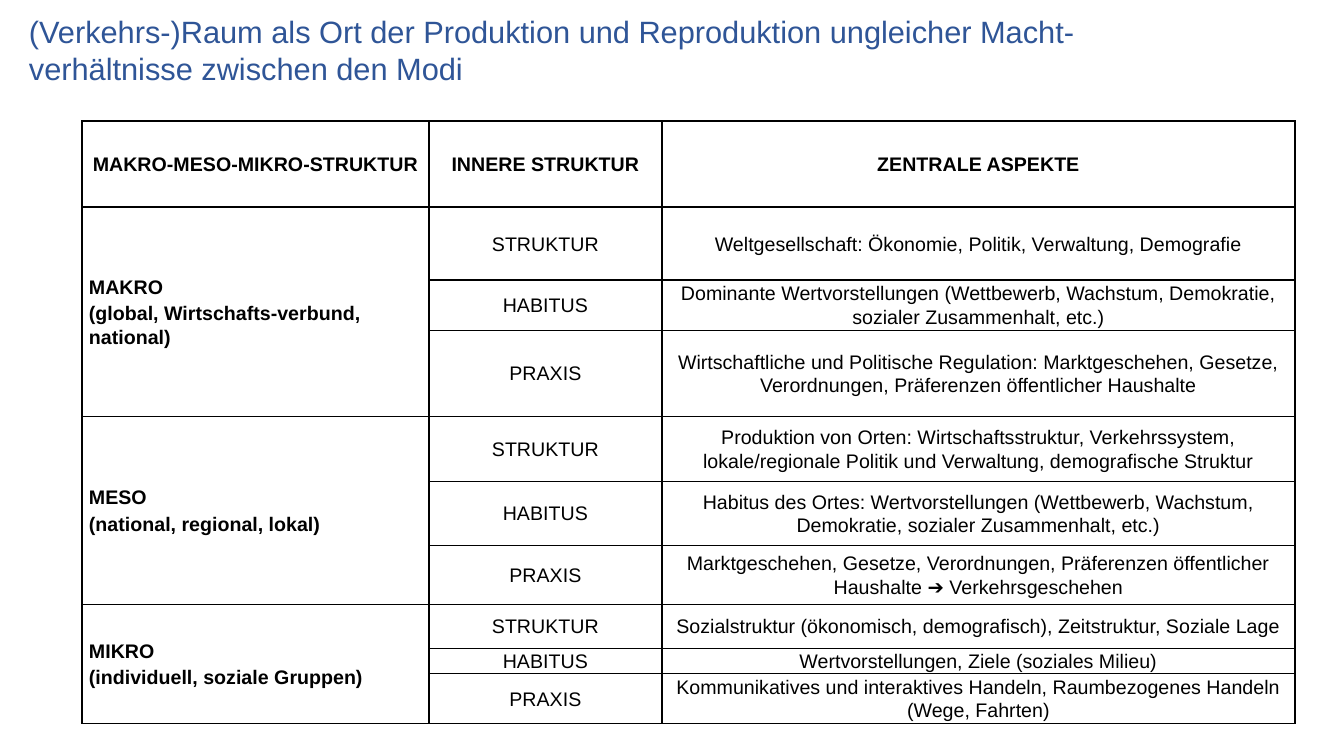
from lxml.etree import SubElement
from pptx import Presentation
from pptx.dml.color import RGBColor
from pptx.enum.text import MSO_ANCHOR as Anchor, PP_ALIGN as Align
from pptx.oxml.ns import qn
from pptx.util import Pt

TITLE = ("(Verkehrs-)Raum als Ort der Produktion und Reproduktion "
         "ungleicher Macht-verhältnisse zwischen den Modi")
HEADINGS = ["MAKRO-MESO-MIKRO-STRUKTUR", "INNERE STRUKTUR", "ZENTRALE ASPEKTE"]
INNER_STRUCTURE = ["STRUKTUR", "HABITUS", "PRAXIS"]
LEVELS = [
    (["MAKRO", "(global, Wirtschafts-verbund, national)"], [
        "Weltgesellschaft: Ökonomie, Politik, Verwaltung, Demografie",
        "Dominante Wertvorstellungen (Wettbewerb, Wachstum, Demokratie, "
        "sozialer Zusammenhalt, etc.)",
        "Wirtschaftliche und Politische Regulation: Marktgeschehen, Gesetze, "
        "Verordnungen, Präferenzen öffentlicher Haushalte",
    ]),
    (["MESO", "(national, regional, lokal)"], [
        "Produktion von Orten: Wirtschaftsstruktur, Verkehrssystem, "
        "lokale/regionale Politik und Verwaltung, demografische Struktur",
        "Habitus des Ortes: Wertvorstellungen (Wettbewerb, Wachstum, "
        "Demokratie, sozialer Zusammenhalt, etc.)",
        "Marktgeschehen, Gesetze, Verordnungen, Präferenzen öffentlicher "
        "Haushalte ➔ Verkehrsgeschehen",
    ]),
    (["MIKRO", "(individuell, soziale Gruppen)"], [
        "Sozialstruktur (ökonomisch, demografisch), Zeitstruktur, Soziale Lage",
        "Wertvorstellungen, Ziele (soziales Milieu)",
        "Kommunikatives und interaktives Handeln, Raumbezogenes Handeln "
        "(Wege, Fahrten)",
    ]),
]
COLUMN_WIDTHS = [347, 233, 633]
ROW_HEIGHTS = [86, 73, 50, 86, 65, 64, 59, 44, 25, 50]
BLUE = RGBColor(0x2F, 0x55, 0x97)
BLACK = RGBColor(0, 0, 0)
FONT = "Arial"


def px(length):
    return round(length * 914400 / 100.8)


def write(frame, lines, size, color, bold=False, align=Align.LEFT,
          spacing=None, before=0, after=0):
    """Fill a text frame with one paragraph per line."""
    frame.word_wrap = True
    for index, line in enumerate(lines):
        para = frame.add_paragraph() if index else frame.paragraphs[0]
        para.alignment = align
        para.line_spacing = spacing
        para.space_before = Pt(before if index else 0)
        para.space_after = Pt(after)
        span = para.add_run()
        span.text = line
        font = span.font
        font.name, font.size, font.bold = FONT, Pt(size), bold
        font.color.rgb = color


def draw_borders(cell):
    properties = cell._tc.get_or_add_tcPr()
    for side in ("a:lnL", "a:lnR", "a:lnT", "a:lnB"):
        line = SubElement(properties, qn(side), w=str(Pt(1)))
        fill = SubElement(line, qn("a:solidFill"))
        SubElement(fill, qn("a:srgbClr"), val=str(BLACK))


def write_cell(cell, lines, bold=False, align=Align.CENTER):
    write(cell.text_frame, lines, 14, BLACK, bold=bold, align=align,
          spacing=1.07, before=1, after=1)


def add_level_table(page):
    table = page.shapes.add_table(
        len(ROW_HEIGHTS), len(COLUMN_WIDTHS), px(82), px(121),
        px(sum(COLUMN_WIDTHS)), px(sum(ROW_HEIGHTS))).table
    table.first_row = table.horz_banding = False
    for column, width in zip(table.columns, COLUMN_WIDTHS):
        column.width = px(width)
    for row, height in zip(table.rows, ROW_HEIGHTS):
        row.height = px(height)
    for cell in table.iter_cells():
        draw_borders(cell)
        cell.fill.background()
        cell.vertical_anchor = Anchor.MIDDLE
        cell.margin_left = cell.margin_right = px(7)
        cell.margin_top = cell.margin_bottom = 0

    for column, heading in enumerate(HEADINGS):
        write_cell(table.cell(0, column), [heading], bold=True)
    group = len(INNER_STRUCTURE)
    for level, (names, aspects) in enumerate(LEVELS):
        top = 1 + level * group
        table.cell(top, 0).merge(table.cell(top + group - 1, 0))
        write_cell(table.cell(top, 0), names, bold=True, align=Align.LEFT)
        for row, (inner, aspect) in enumerate(zip(INNER_STRUCTURE, aspects), top):
            write_cell(table.cell(row, 1), [inner])
            write_cell(table.cell(row, 2), [aspect])


def main():
    deck = Presentation()
    deck.slide_width, deck.slide_height = px(1344), px(756)
    page = deck.slides.add_slide(deck.slide_layouts[6])
    title = page.shapes.add_textbox(px(19), px(8), px(1106), px(85))
    write(title.text_frame, [TITLE], 22, BLUE, after=24)
    add_level_table(page)
    deck.save("out.pptx")


if __name__ == "__main__":
    main()
